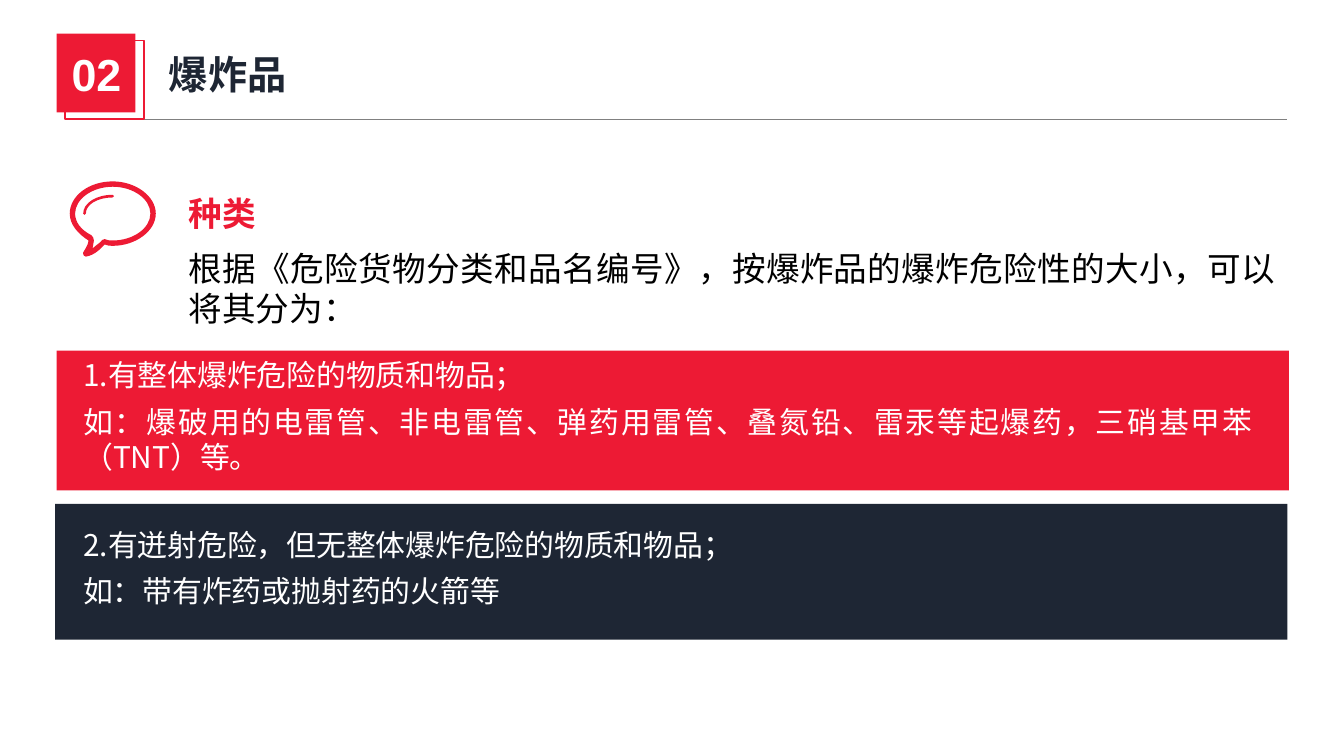
from lxml import etree
from pptx import Presentation
from pptx.dml.color import RGBColor
from pptx.enum.shapes import MSO_CONNECTOR, MSO_SHAPE
from pptx.enum.text import MSO_ANCHOR, PP_ALIGN
from pptx.oxml.ns import qn
from pptx.util import Pt

RECT = MSO_SHAPE.RECTANGLE
STRAIGHT = MSO_CONNECTOR.STRAIGHT
TOP = MSO_ANCHOR.TOP
LEFT, CENTER, JUSTIFY = PP_ALIGN.LEFT, PP_ALIGN.CENTER, PP_ALIGN.JUSTIFY

RED, NAVY, WHITE, BLACK, GRAY = "ED1A34", "1E2634", "FFFFFF", "000000", "808080"
CJK = "Noto Sans CJK SC"
LINE_RATIO = 1.19
BUBBLE_UNIT = 0.72

SHINE = [(32, 10), (32, 10), (33, 10), (33, 11), (33, 11), (32, 12), (32, 12),
         (21, 12), (12, 17), (12, 24), (12, 24), (12, 25), (11, 25),
         (10, 25), (10, 24), (10, 24), (10, 16), (20, 10), (32, 10)]
INNER = [(32, 4), (17, 4), (4, 13), (4, 24), (4, 30), (8, 36), (16, 40),
         (17, 41), (18, 42), (18, 44), (18, 46), (17, 48), (17, 50),
         (19, 48), (22, 46), (23, 45), (23, 44), (25, 43), (26, 43),
         (28, 44), (30, 44), (32, 44), (47, 44), (60, 35), (60, 24),
         (60, 13), (47, 4), (32, 4)]
OUTER = [(32, 0), (49, 0), (64, 11), (64, 24), (64, 37), (49, 48), (32, 48),
         (30, 48), (28, 48), (26, 47), (24, 49), (19, 55), (12, 56),
         (11, 56), (10, 55), (10, 54), (10, 54), (10, 53), (10, 53),
         (11, 51), (14, 47), (14, 44), (6, 39), (0, 32), (0, 24),
         (0, 11), (14, 0), (32, 0)]


def color(value):
    return RGBColor.from_string(value)


def paint(sp, fill=None, line=None):
    sp.shadow.inherit = False
    if fill:
        sp.fill.solid()
        sp.fill.fore_color.rgb = color(fill)
    else:
        sp.fill.background()
    if line:
        sp.line.color.rgb = color(line)
        sp.line.width = Pt(1)
    else:
        sp.line.fill.background()


def add_box(shapes, x, y, w, h, fill=None, line=None):
    paint(shapes.add_shape(RECT, Pt(x), Pt(y), Pt(w), Pt(h)), fill, line)


def add_text(s, x, y, w, h, lines, size, ink, font=CJK, bold=False,
             align=LEFT, after=0, wrap=True):
    tf = s.shapes.add_textbox(Pt(x), Pt(y), Pt(w), Pt(h)).text_frame
    tf.word_wrap = wrap
    tf.vertical_anchor = TOP
    tf.text = "\n".join(lines)
    for p in tf.paragraphs:
        p.alignment = align
        p.space_after = Pt(after)
        if font == CJK:
            p.line_spacing = Pt(round(size * LINE_RATIO, 1))
        for r in p.runs:
            r.font.name = font
            r.font.size = Pt(size)
            r.font.bold = bold
            r.font.color.rgb = color(ink)
            ea = etree.SubElement(r.font._element, qn("a:ea"))
            ea.set("typeface", font)


def add_header(s, x, y, w, number, title):
    side, shift_x, shift_y = 42.2, 4.6, 3.7
    bottom = y + side + shift_y
    line = s.shapes.add_connector(STRAIGHT, Pt(x + 46.8), Pt(bottom),
                                  Pt(x + w), Pt(bottom))
    line.line.color.rgb = color(GRAY)
    line.line.width = Pt(0.5)
    etree.SubElement(line._element.spPr, qn("a:effectLst"))
    badge = s.shapes.add_group_shape().shapes
    add_box(badge, x, y, side, side, fill=RED)
    add_box(badge, x + shift_x, y + shift_y, side, side, line=RED)
    add_text(s, x - 5, y + 3.6, 52.6, 36, [number], 24, WHITE,
             font="Arial", bold=True, align=CENTER)
    add_text(s, x + 53, y + 5.6, 316.8, 32.4, [title], 21, NAVY, bold=True)


def add_bubble(s, x, y):
    builder = None
    for contour in (SHINE, INNER, OUTER):
        points = [(Pt(x + BUBBLE_UNIT * px), Pt(y + BUBBLE_UNIT * py))
                  for px, py in contour]
        if builder is None:
            builder = s.shapes.build_freeform(*points[0])
        else:
            builder.move_to(*points[0])
        builder.add_line_segments(points[1:], close=True)
    sp = builder.convert_to_shape()
    paint(sp, fill=RED)
    segments = list(sp._element.iter(qn("a:lnTo")))
    for i in range(0, len(segments), 3):
        curve = etree.Element(qn("a:cubicBezTo"))
        segments[i].addprevious(curve)
        for segment in segments[i:i + 3]:
            curve.append(segment[0])
            segment.getparent().remove(segment)


def add_intro(s, x, y, w, heading, body):
    add_bubble(s, x, y)
    add_text(s, x + 56.6, y + 2.9, 50.4, 28.8, [heading], 18, RED,
             bold=True, wrap=False)
    add_text(s, x + 56.6, y + 32.4, w - 56.6, 51.1, [body], 18, BLACK, align=JUSTIFY)


def add_band(s, x, y, w, h, fill, text_x, text_h, lines):
    add_box(s.shapes, x, y, w, h, fill=fill)
    add_text(s, text_x, y + (h - text_h) / 2, 641.5, text_h, lines, 16, WHITE,
             align=JUSTIFY, after=5.8)


def main():
    prs = Presentation()
    prs.slide_width, prs.slide_height = Pt(720), Pt(405)
    s = prs.slides.add_slide(prs.slide_layouts[6])
    add_header(s, 30.4, 18, 659.2, "02", "爆炸品")
    add_intro(s, 37.4, 97.2, 653.1, "种类",
              "根据《危险货物分类和品名编号》，按爆炸品的爆炸危险性的大小，可以将其分为：")
    add_band(s, 30.4, 187.9, 660.2, 74.9, RED, 37.5, 74.9, [
        "1.有整体爆炸危险的物质和物品；",
        "如：爆破用的电雷管、非电雷管、弹药用雷管、叠氮铅、雷汞等起爆药，三硝基甲苯（TNT）等。"])
    add_band(s, 29.5, 270, 660.2, 72.7, NAVY, 37.5, 55.4, [
        "2.有迸射危险，但无整体爆炸危险的物质和物品；",
        "如：带有炸药或抛射药的火箭等"])
    prs.save("out.pptx")


if __name__ == "__main__":
    main()
